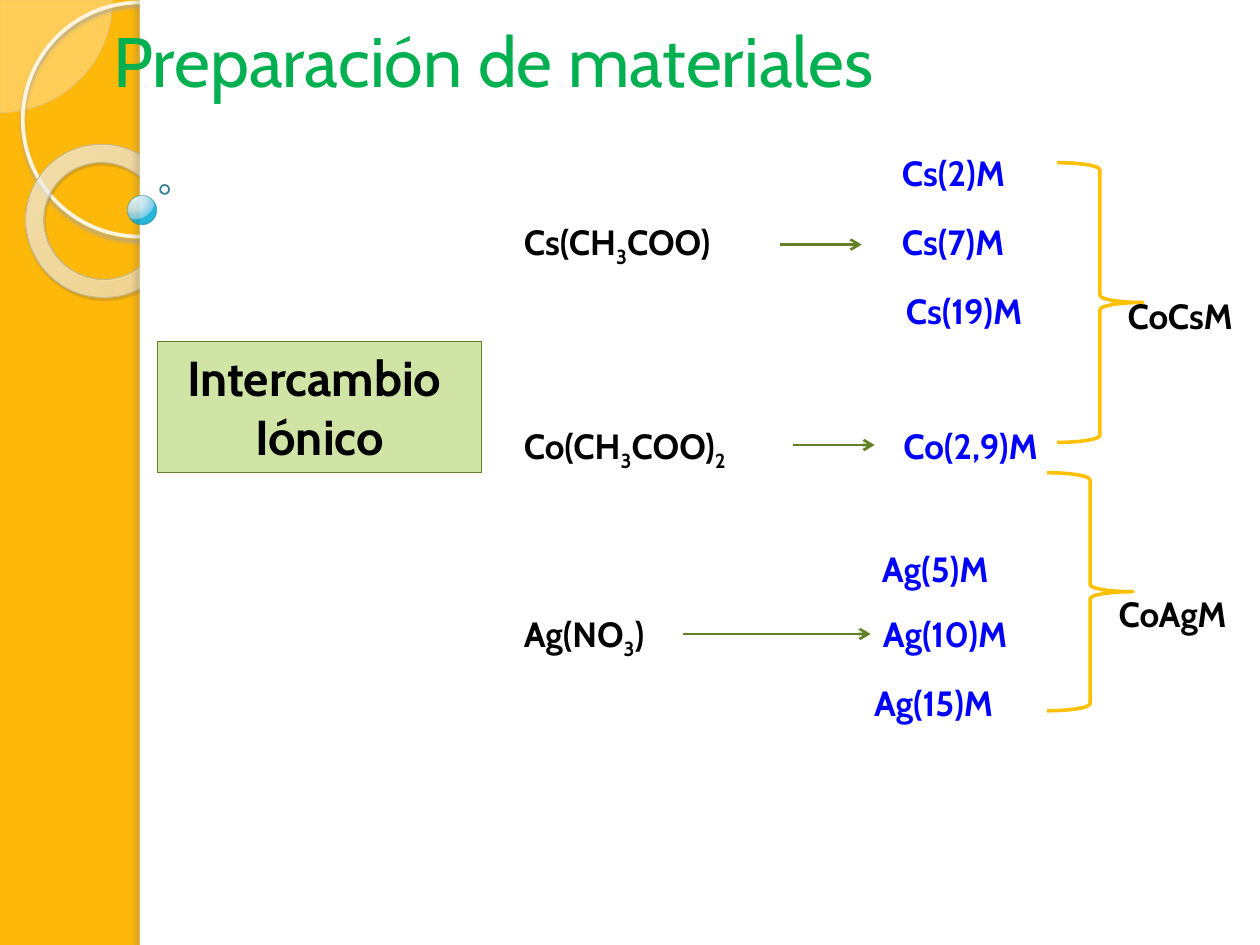
"""Build the slide on preparing materials by ion exchange."""
from dataclasses import dataclass

import lxml.etree
import pptx
import pptx.dml.color
import pptx.enum.shapes
import pptx.enum.text
import pptx.oxml.ns
import pptx.util


@dataclass(frozen=True)
class Theme:
    font: str = "Cabin"
    amber: str = "FEB80A"
    white: str = "FFFFFF"
    black: str = "000000"
    product: str = "0000FF"
    title: str = "00B050"
    panel: str = "D0E4A6"
    olive: str = "638026"
    brace: str = "FFC000"
    title_size: int = 40
    panel_size: int = 28
    label_size: int = 20


theme = Theme()
Cm = pptx.util.Cm
Pt = pptx.util.Pt
RGB = pptx.dml.color.RGBColor.from_string
SHAPE = pptx.enum.shapes.MSO_SHAPE
ALIGN = pptx.enum.text.PP_ALIGN
qn = pptx.oxml.ns.qn


def add_xml(parent, tag, **attributes):
    return lxml.etree.SubElement(parent, qn(tag), {key: str(value) for key, value in attributes.items()})


def write(text, box=None, frame=None, size=theme.label_size, color=theme.black, bold=True, align=ALIGN.LEFT):
    if frame is None:
        frame = slide.shapes.add_textbox(*map(Cm, box)).text_frame
    frame.word_wrap = False
    for number, line in enumerate(text.split("\n")):
        paragraph = frame.add_paragraph() if number else frame.paragraphs[0]
        paragraph.alignment = align
        for part, piece in enumerate(line.split("_")):
            if not piece:
                continue
            run = paragraph.add_run()
            run.text = piece
            run.font.name = theme.font
            run.font.size = Pt(size)
            run.font.bold = bold
            run.font.color.rgb = RGB(color)
            if part % 2:
                run.font._element.set("baseline", "-25000")


deck = pptx.Presentation()
deck.slide_width, deck.slide_height = Cm(25.4), Cm(19.05)
slide = deck.slides.add_slide(deck.slide_layouts[6])
slide.background.fill.solid()
slide.background.fill.fore_color.rgb = RGB(theme.amber)

donut_stops = [(0, "FFFCF6", 70), (70, "FFFEFB", 55), (100, "F0D28E", 60)]
bead_stops = [(0, "DAF4FF", 95), (50, "C3E3F0", 90), (95, "6BC7E8", 88), (100, "00ABD5", 85)]
figures = [
    (SHAPE.PIE, (-2.27, -2.27, 4.54, 4.54), dict(adjust=(0, 54), fill="FEFAF4", alpha=33, line=("D3C39F", 0.25))),
    (SHAPE.OVAL, (0.46, 0.05, 4.72, 4.72), dict(line=("FFF5DE", 2.15), shadow=("B0A68F", 85, 2, 2, 90))),
    (SHAPE.DONUT, (0.51, 2.92, 3.12, 3.07), dict(
        adjust=(0.12,), turn=38.6, stops=donut_stops, focus=(-408, -50, 508, 150),
        line=("C7B893", 0.58), shadow=("5A5444", 35, 1, 1.2, 75))),
    (SHAPE.RECTANGLE, (2.82, 0, 22.58, 19.05), dict(fill=theme.white)),
    (SHAPE.RECTANGLE, (2.82, 0, 0.2, 19.05), dict(fill=theme.white, shadow=("736F63", 25, 3, 3, 180))),
    (SHAPE.OVAL, (2.57, 3.94, 0.58, 0.58), dict(stops=bead_stops, focus=(25, 12, 75, 88), line=("308EA5", 0.16))),
    (SHAPE.OVAL, (3.23, 3.73, 0.18, 0.18), dict(line=("318093", 1))),
    (SHAPE.RECTANGLE, (3.18, 6.88, 6.53, 2.64), dict(
        fill=theme.panel, line=(theme.olive, 0.75), text="Intercambio \nIónico")),
    (SHAPE.RIGHT_BRACE, (21.31, 3.28, 1.73, 5.64), dict(line=(theme.brace, 2))),
    (SHAPE.RIGHT_BRACE, (21.11, 9.53, 1.73, 4.8), dict(line=(theme.brace, 2))),
]
for preset, box, look in figures:
    figure = slide.shapes.add_shape(preset, *map(Cm, box))
    figure.shadow.inherit = False
    figure.rotation = look.get("turn", 0)
    properties = figure._element.spPr
    for index, value in enumerate(look.get("adjust", ())):
        figure.adjustments[index] = value
    if "fill" in look:
        figure.fill.solid()
        figure.fill.fore_color.rgb = RGB(look["fill"])
        if "alpha" in look:
            add_xml(properties.find(".//" + qn("a:srgbClr")), "a:alpha", val=look["alpha"] * 1000)
    elif "stops" in look:
        figure.fill.gradient()
        gradient = properties.find(qn("a:gradFill"))
        for child in list(gradient):
            gradient.remove(child)
        stop_list = add_xml(gradient, "a:gsLst")
        for position, color, alpha in look["stops"]:
            stop = add_xml(stop_list, "a:gs", pos=position * 1000)
            add_xml(add_xml(stop, "a:srgbClr", val=color), "a:alpha", val=alpha * 1000)
        edges = {side: value * 1000 for side, value in zip("ltrb", look["focus"])}
        add_xml(add_xml(gradient, "a:path", path="circle"), "a:fillToRect", **edges)
    else:
        figure.fill.background()
    if "line" in look:
        color, width = look["line"]
        figure.line.color.rgb = RGB(color)
        figure.line.width = Pt(width)
    else:
        figure.line.fill.background()
    if "shadow" in look:
        color, alpha, blur, distance, direction = look["shadow"]
        shade = add_xml(properties.find(qn("a:effectLst")), "a:outerShdw", blurRad=Pt(blur),
                        dist=Pt(distance), dir=direction * 60000, algn="tl", rotWithShape=0)
        add_xml(add_xml(shade, "a:srgbClr", val=color), "a:alpha", val=alpha * 1000)
    if "text" in look:
        write(look["text"], frame=figure.text_frame, size=theme.panel_size, align=ALIGN.CENTER)

write("Preparación de materiales", (2.01, 0.23, 15.88, 1.96), size=theme.title_size,
      color=theme.title, bold=False, align=ALIGN.CENTER)

label_height = 1.09
for salt, top, width in [("Cs(CH_3_COO)", 4.32, 5.05), ("Co(CH_3_COO)_2_", 8.43, 5.44), ("Ag(NO_3_)", 12.22, 3.45)]:
    write(salt, (10.31, top, width, label_height))

for product, left, top, width in [
    ("Cs(2)M", 17.93, 2.92, 2.92),
    ("Cs(7)M", 17.93, 4.32, 2.92),
    ("Cs(19)M", 18.01, 5.72, 3.3),
    ("Co(2,9)M", 17.96, 8.43, 3.61),
    ("Ag(5)M", 17.53, 10.92, 3),
    ("Ag(10)M", 17.55, 12.22, 3.4),
    ("Ag(15)M", 17.37, 13.61, 3.4),
]:
    write(product, (left, top, width, label_height), color=theme.product)

for mixture, left, top, width in [("CoCsM", 22.48, 5.82, 2.97), ("CoAgM", 22.3, 11.81, 3.05)]:
    write(mixture, (left, top, width, label_height))

for start, end, height in [(15.72, 17.37, 4.93), (15.98, 17.63, 8.97), (13.77, 17.55, 12.78)]:
    arrow = slide.shapes.add_connector(
        pptx.enum.shapes.MSO_CONNECTOR.STRAIGHT, Cm(start), Cm(height), Cm(end), Cm(height))
    arrow.line.color.rgb = RGB(theme.olive)
    arrow.line.width = Pt(1.5)
    add_xml(arrow.line._get_or_add_ln(), "a:tailEnd", type="arrow")
    add_xml(arrow._element.spPr, "a:effectLst")

deck.save("out.pptx")
